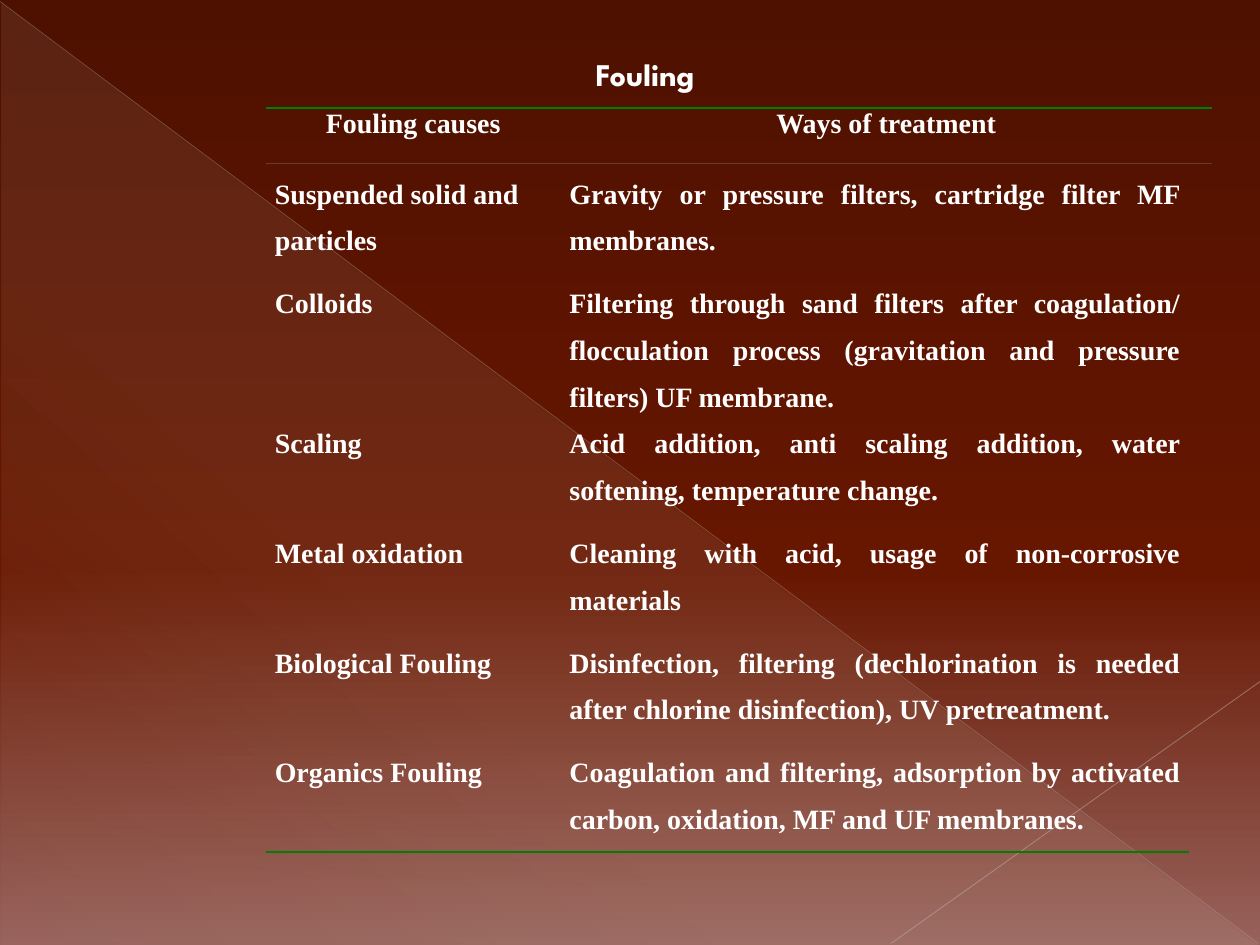
from lxml import etree
from pptx import Presentation, util as u
from pptx.dml.color import RGBColor
from pptx.enum import shapes, text
from pptx.oxml import ns

NO_GRID = "{2D5ABB26-0587-4C30-8999-92F81FD0307C}"
ROWS = [
    ("Suspended solid and particles",
     "Gravity or pressure filters, cartridge filter MF membranes."),
    ("Colloids",
     "Filtering through sand filters after coagulation/ flocculation process "
     "(gravitation and pressure filters) UF membrane."),
    ("Scaling",
     "Acid addition, anti scaling addition, water softening, temperature change."),
    ("Metal oxidation", "Cleaning with acid, usage of non-corrosive materials"),
    ("Biological Fouling",
     "Disinfection, filtering (dechlorination is needed after chlorine "
     "disinfection), UV pretreatment."),
    ("Organics Fouling",
     "Coagulation and filtering, adsorption by activated carbon, oxidation, "
     "MF and UF membranes."),
]


def color(value):
    return RGBColor.from_string(value)


def add(parent, tag, **attributes):
    return etree.SubElement(parent, ns.qn(tag), {k: str(v) for k, v in attributes.items()})


def add_color(parent, value, alpha=100):
    node = add(parent, "a:srgbClr", val=value)
    if alpha < 100:
        add(node, "a:alpha", val=alpha * 1000)


def set_gradient(fill, owner, stops, angle):
    fill.gradient()
    gradient = owner.find(".//" + ns.qn("a:gradFill"))
    for child in list(gradient):
        gradient.remove(child)
    stop_list = add(gradient, "a:gsLst")
    for position, value, alpha in stops:
        add_color(add(stop_list, "a:gs", pos=position * 1000), value, alpha)
    add(gradient, "a:lin", ang=angle * 60000, scaled=0)


class Slide:
    heading = {"name": "League Spartan", "size": u.Pt(18), "bold": True}
    body = {"name": "Times New Roman", "size": u.Pt(16), "bold": True}
    ink = "FFFFFF"

    def __init__(self, deck):
        self.page = deck.slides.add_slide(deck.slide_layouts[5])

    def background(self, stops, angle):
        fill = self.page.background.fill
        set_gradient(fill, self.page.element, stops, angle)

    def fill_text(self, frame, words, style, **layout):
        para = frame.paragraphs[0]
        for key, value in layout.items():
            setattr(para, key, value)
        span = para.add_run()
        span.text = words
        for key, value in style.items():
            setattr(span.font, key, value)
        span.font.color.rgb = color(self.ink)

    def title(self, words, left, top, width, height):
        box = self.page.shapes.title
        place = {"left": left, "top": top, "width": width, "height": height}
        for key, value in place.items():
            setattr(box, key, u.Cm(value))
        frame = box.text_frame
        frame.auto_size = text.MSO_AUTO_SIZE.NONE
        frame.vertical_anchor = text.MSO_ANCHOR.TOP
        self.fill_text(frame, words, self.heading, alignment=text.PP_ALIGN.CENTER)

    def triangle(self, left, top, width, height, stops, angle):
        shape = self.page.shapes.add_shape(
            shapes.MSO_SHAPE.RIGHT_TRIANGLE, *map(u.Cm, (left, top, width, height)))
        shape.shadow.inherit = False
        set_gradient(shape.fill, shape.element.spPr, stops, angle)
        shape.line.fill.background()

    def line(self, x1, y1, x2, y2, value, width, alpha):
        line = self.page.shapes.add_connector(
            shapes.MSO_CONNECTOR.STRAIGHT, *map(u.Cm, (x1, y1, x2, y2)))
        line.line.color.rgb = color(value)
        line.line.width = u.Pt(width)
        properties = line.element.spPr
        add(properties.find(".//" + ns.qn("a:srgbClr")), "a:alpha", val=alpha * 1000)
        add(properties, "a:effectLst")

    def table(self, left, top, widths, heights):
        table = self.page.shapes.add_table(
            len(heights), len(widths),
            *map(u.Cm, (left, top, sum(widths), sum(heights)))).table
        for column, width in zip(table.columns, widths):
            column.width = u.Cm(width)
        for row, height in zip(table.rows, heights):
            row.height = u.Cm(height)
        table.first_row = table.horz_banding = False
        table._tbl.tblPr.find(ns.qn("a:tableStyleId")).text = NO_GRID
        for cell in table.iter_cells():
            cell.margin_left = cell.margin_right = u.Cm(0.18)
            cell.margin_top = cell.margin_bottom = 0
        return table

    def cell(self, cell, words, **layout):
        self.fill_text(cell.text_frame, words, self.body, **layout)

    def borders(self, cells, **edges):
        for cell in cells:
            properties = cell._tc.get_or_add_tcPr()
            for tag, (value, width) in edges.items():
                edge = add(properties, "a:" + tag, w=u.Pt(width))
                add_color(add(edge, "a:solidFill"), value)


def main():
    deck = Presentation()
    deck.slide_width, deck.slide_height = u.Cm(25.4), u.Cm(19.05)
    slide = Slide(deck)
    slide.background([(0, "4E1100", 100), (60, "671600", 100), (100, "97625B", 100)], 90)
    slide.triangle(0.03, 0.05, 25.35, 19,
                   [(0, "E7DEC9", 10), (70, "E7DEC9", 8), (100, "E7DEC9", 1)], 133)
    slide.line(0, 0.03, 25.37, 19.02, "BDB3B2", 0.39, 35)
    slide.line(25.4, 13.74, 17.96, 19.02, "C5BCBB", 0.47, 45)

    table = slide.table(5.36, 2.18, [5.94, 12.67, 0.43],
                        [1.12, 2.21, 2.03] + [2.21] * 4)
    table.cell(0, 1).merge(table.cell(0, 2))
    for column, words in enumerate(["Fouling causes", "Ways of treatment"]):
        slide.cell(table.cell(0, column), words, alignment=text.PP_ALIGN.CENTER)
    for row, pair in enumerate(ROWS, 1):
        for column, words in enumerate(pair):
            first = row == 1 and column == 0
            align = text.PP_ALIGN.LEFT if first else text.PP_ALIGN.JUSTIFY
            slide.cell(table.cell(row, column), words, alignment=align, line_spacing=1.5)
    slide.borders(table.rows[0].cells, lnT=("008000", 1.5), lnB=("6B3A2E", 0.5))
    slide.borders(list(table.rows[len(ROWS)].cells)[:2], lnB=("008000", 1.5))

    slide.title("Fouling", 8.94, 0.99, 8.13, 1.02)
    deck.save("out.pptx")


if __name__ == "__main__":
    main()
